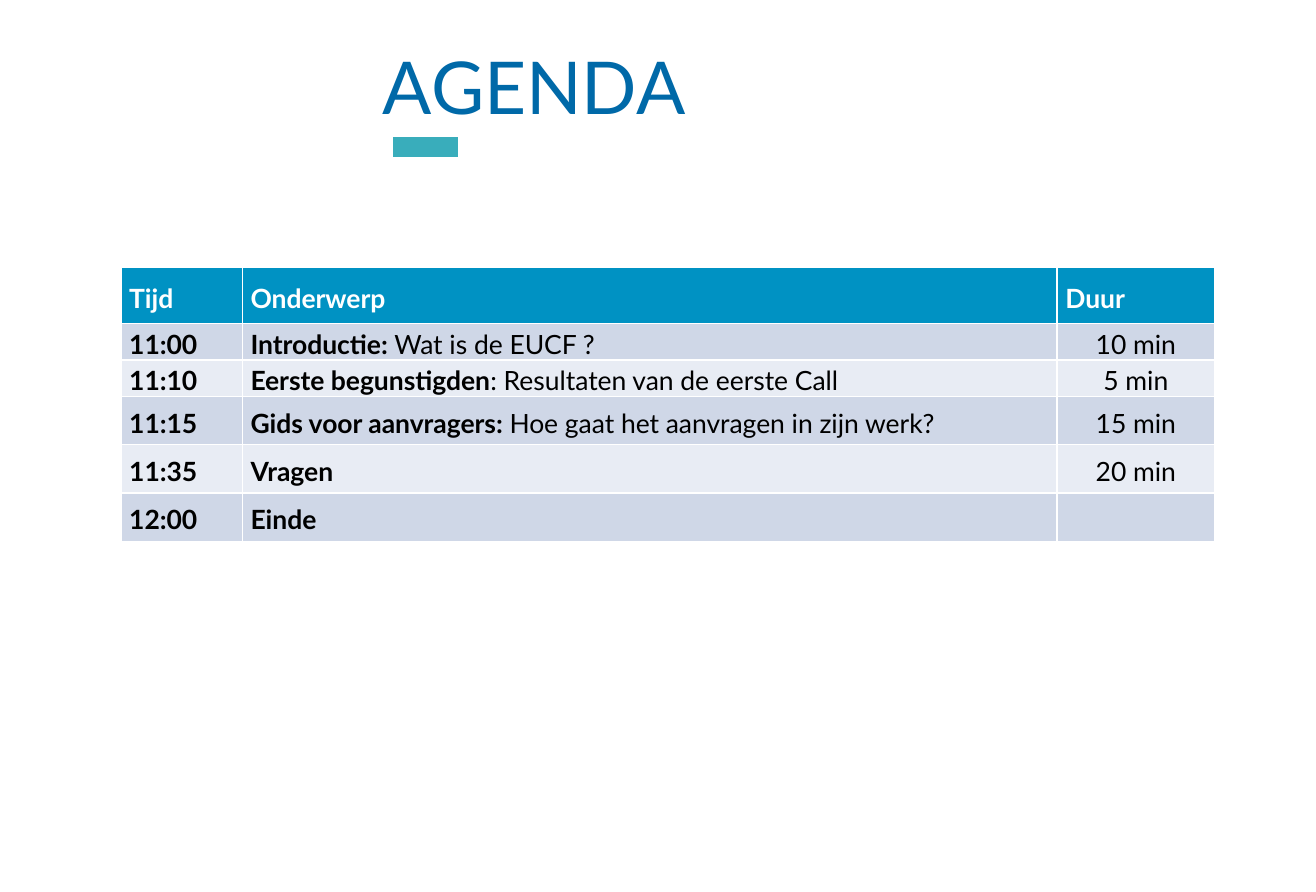
import pptx
import pptx.dml.color
import pptx.enum.text
import pptx.oxml
import pptx.util
from dataclasses import dataclass

Pt = pptx.util.Pt
Align = pptx.enum.text.PP_ALIGN
Anchor = pptx.enum.text.MSO_ANCHOR


@dataclass(frozen=True)
class Theme:
    font: str = "Lato"
    title: str = "0069A8"
    accent: str = "39ADBB"
    head: str = "0092C3"
    bands: tuple = ("CFD7E7", "E8ECF4")
    light: str = "FFFFFF"
    dark: str = "000000"
    big: int = 44
    small: int = 16


def tint(code):
    return pptx.dml.color.RGBColor.from_string(code)


class Page:
    def __init__(self, deck, theme):
        self.theme = theme
        self.slide = deck.slides.add_slide(deck.slide_layouts[5])

    def style(self, run, size, color, bold=False):
        font = run.font
        font.name, font.size, font.bold = self.theme.font, Pt(size), bold
        font.color.rgb = tint(color)

    def title(self, text, left, top, width, height):
        box = self.slide.shapes.title
        box.left, box.top, box.width, box.height = map(Pt, (left, top, width, height))
        frame = box.text_frame
        frame.text = text
        frame.auto_size = pptx.enum.text.MSO_AUTO_SIZE.NONE
        frame.vertical_anchor = Anchor.TOP
        para = frame.paragraphs[0]
        para.alignment = Align.LEFT
        self.style(para.runs[0], self.theme.big, self.theme.title)

    def line(self, left, top, width, weight):
        kind = pptx.enum.shapes.MSO_CONNECTOR.STRAIGHT
        rule = self.slide.shapes.add_connector(
            kind, Pt(left), Pt(top), Pt(left + width), Pt(top))
        rule.line.color.rgb = tint(self.theme.accent)
        rule.line.width = Pt(weight)
        props = rule._element.spPr
        props.append(pptx.oxml.parse_xml(
            '<a:effectLst xmlns:a="http://schemas.openxmlformats.org/drawingml/2006/main"/>'))

    def cell(self, cell, bold, plain, fill, color, align):
        """Fill one cell with a bold part followed by a plain part."""
        cell.fill.solid()
        cell.fill.fore_color.rgb = tint(fill)
        cell.vertical_anchor = Anchor.MIDDLE
        cell.margin_left = cell.margin_right = Pt(5)
        cell.margin_top = cell.margin_bottom = Pt(0)
        para = cell.text_frame.paragraphs[0]
        para.alignment, para.line_spacing = align, 1.15
        for text, strong in ((bold, True), (plain, False)):
            if text:
                run = para.add_run()
                run.text = text
                self.style(run, self.theme.small, color, strong)

    def table(self, rows, left, top, widths, heights):
        theme = self.theme
        grid = self.slide.shapes.add_table(
            len(rows), len(widths), Pt(left), Pt(top),
            Pt(sum(widths)), Pt(sum(heights))).table
        for col, width in zip(grid.columns, widths):
            col.width = Pt(width)
        for row, height in zip(grid.rows, heights):
            row.height = Pt(height)
        for y, row in enumerate(rows):
            fill = theme.bands[(y - 1) % 2] if y else theme.head
            color = theme.dark if y else theme.light
            for x, (bold, plain) in enumerate(row):
                align = Align.CENTER if y and x == 2 else Align.LEFT
                self.cell(grid.cell(y, x), bold, plain, fill, color, align)


AGENDA = [
    ("11:00", "Introductie: ", "Wat is de EUCF ?", "10 min"),
    ("11:10", "Eerste begunstigden", ": Resultaten van de eerste Call", "5 min"),
    ("11:15", "Gids voor aanvragers: ", "Hoe gaat het aanvragen in zijn werk?", "15 min"),
    ("11:35", "Vragen", "", "20 min"),
    ("12:00", "Einde", "", ""),
]


def main():
    deck = pptx.Presentation()
    deck.slide_width, deck.slide_height = Pt(794.16), Pt(538.56)
    page = Page(deck, Theme())
    page.title("AGENDA", 223.9, 21.6, 438.5, 90)
    page.line(237.4, 88.6, 39, 12)
    rows = [[(name, "") for name in ("Tijd", "Onderwerp", "Duur")]]
    rows += [[(time, ""), (topic, detail), ("", span)]
             for time, topic, detail, span in AGENDA]
    page.table(rows, 73, 161.5, (73.2, 491.8, 95), (33.8, 21, 21, 29.2, 29.2, 29.2))
    deck.save("out.pptx")


if __name__ == "__main__":
    main()
